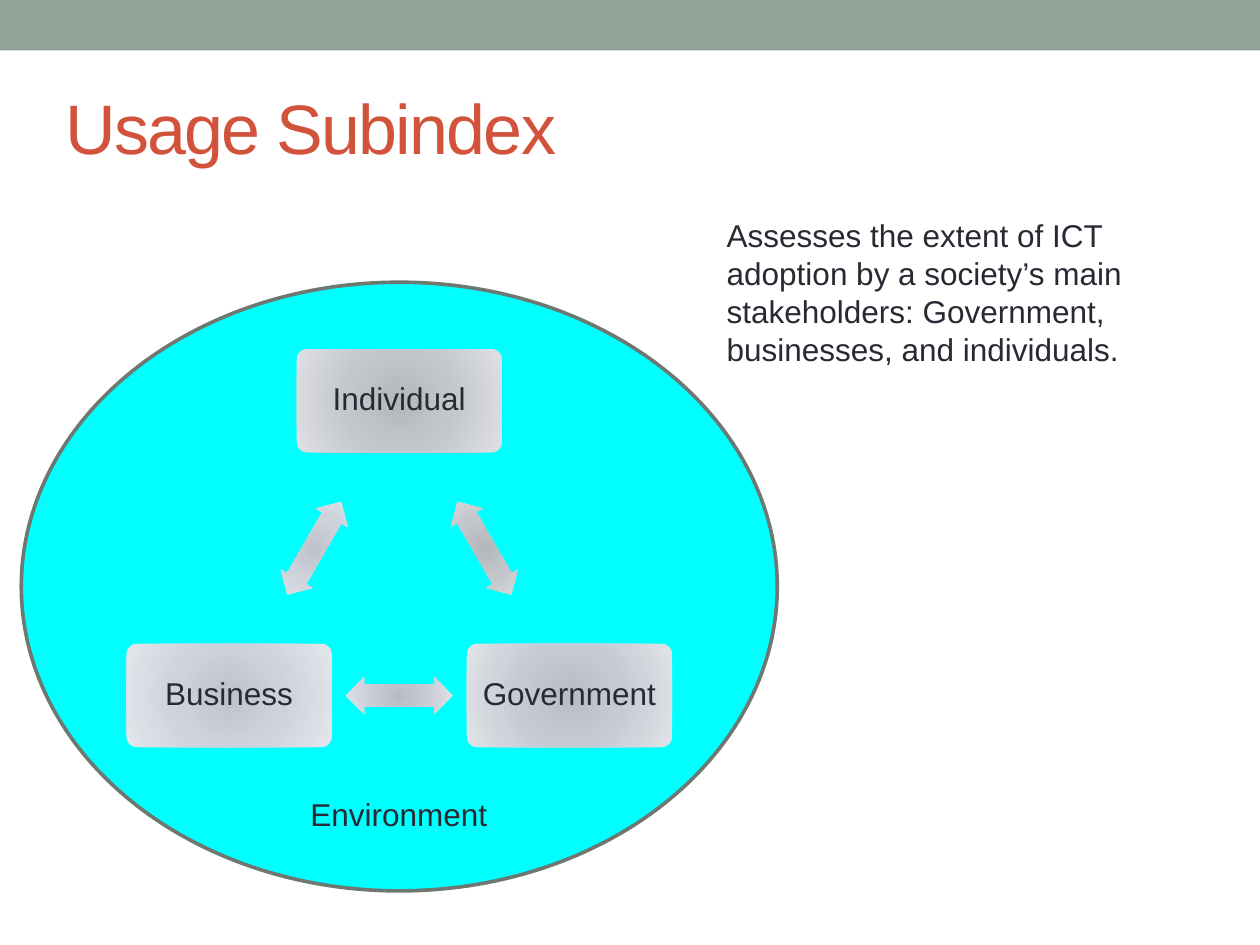
import math

import lxml.etree
import pptx
import pptx.dml.color
import pptx.enum.shapes
import pptx.enum.text
import pptx.oxml.ns
import pptx.util

Cm = pptx.util.Cm
Pt = pptx.util.Pt
Shape = pptx.enum.shapes.MSO_SHAPE
Align = pptx.enum.text.PP_ALIGN
Anchor = pptx.enum.text.MSO_ANCHOR
qn = pptx.oxml.ns.qn

COLORS = {
    "band": "93A299",
    "ellipse": "00FFFF",
    "outline": "6D7871",
    "title": "D2533C",
    "text": "292934",
}


def write_text(shape, text, size=18, color="text", align=Align.LEFT, anchor=Anchor.TOP):
    frame = shape.text_frame
    frame.text = text
    frame.word_wrap = True
    frame.vertical_anchor = anchor
    paragraph = frame.paragraphs[0]
    paragraph.alignment = align
    span = paragraph.runs[0]
    span.font.name = "Arial"
    span.font.size = Pt(size)
    span.font.color.rgb = pptx.dml.color.RGBColor.from_string(COLORS[color])
    return paragraph


def add_figure(kind, left, top, width, height, fill):
    """Add a preset shape with a solid fill, or a radial one for a list of colours."""
    shape = page.shapes.add_shape(kind, Cm(left), Cm(top), Cm(width), Cm(height))
    shape.shadow.inherit = False
    shape.line.fill.background()
    if isinstance(fill, str):
        shape.fill.solid()
        shape.fill.fore_color.rgb = pptx.dml.color.RGBColor.from_string(fill)
        return shape
    shape.fill.gradient()
    gradient = shape.element.spPr.find(qn("a:gradFill"))
    for child in list(gradient):
        gradient.remove(child)
    stops = lxml.etree.SubElement(gradient, qn("a:gsLst"))
    for position, color in zip((0, 45, 100), fill):
        stop = lxml.etree.SubElement(stops, qn("a:gs"), pos=str(position * 1000))
        lxml.etree.SubElement(stop, qn("a:srgbClr"), val=color)
    circle = lxml.etree.SubElement(gradient, qn("a:path"), path="circle")
    lxml.etree.SubElement(circle, qn("a:fillToRect"), {side: "100000" for side in "ltrb"})
    return shape


deck = pptx.Presentation()
deck.slide_width, deck.slide_height = Cm(25.4), Cm(19.05)
page = deck.slides.add_slide(deck.slide_layouts[6])

# Top band and title
add_figure(Shape.RECTANGLE, 0, 0, 25.4, 1.02, COLORS["band"])
title = page.shapes.add_textbox(Cm(1.07), Cm(1.07), Cm(22.86), Cm(2.97))
paragraph = write_text(title, "Usage Subindex", 40, "title", anchor=Anchor.MIDDLE)
paragraph.runs[0].font._element.set("spc", "-100")

# Environment ellipse
ellipse = add_figure(Shape.OVAL, 0.43, 5.69, 15.24, 12.27, COLORS["ellipse"])
ellipse.line.color.rgb = pptx.dml.color.RGBColor.from_string(COLORS["outline"])
ellipse.line.width = Pt(2.08)

# Stakeholders on an equilateral triangle, clockwise from the top
center_x, top_y, side = 8.05, 8.08, 6.86
bottom_y = top_y + side * math.sqrt(3) / 2
stakeholders = [
    ("Individual", center_x, top_y, ("B4B7BC", "C3C7CB", "DFE0E3")),
    ("Government", center_x + side / 2, bottom_y, ("B8BCC3", "C6CBD3", "E0E3E7")),
    ("Business", center_x - side / 2, bottom_y, ("BEC3CB", "CDD2DB", "E3E6EB")),
]
box_width, box_height = 4.14, 2.08
arrow_width, arrow_height = 2.16, 0.74
for index, (name, x, y, shades) in enumerate(stakeholders):
    box = add_figure(Shape.ROUNDED_RECTANGLE, x - box_width / 2, y - box_height / 2,
                     box_width, box_height, shades)
    box.adjustments[0] = 0.1
    frame = box.text_frame
    frame.margin_left = frame.margin_right = Cm(0.23)
    frame.margin_top = frame.margin_bottom = Cm(0.23)
    paragraph = write_text(box, name, align=Align.CENTER, anchor=Anchor.MIDDLE)
    paragraph.line_spacing = 0.9

    # Two-way arrow halfway to the next stakeholder
    next_x, next_y = stakeholders[(index + 1) % len(stakeholders)][1:3]
    arrow = add_figure(Shape.LEFT_RIGHT_ARROW, (x + next_x - arrow_width) / 2,
                       (y + next_y - arrow_height) / 2, arrow_width, arrow_height, shades)
    arrow.adjustments[0] = 0.6
    arrow.adjustments[1] = 0.5
    arrow.rotation = 60 + 120 * index

# Ellipse label and description
label = page.shapes.add_textbox(Cm(5.08), Cm(15.9), Cm(5.92), Cm(1.02))
write_text(label, "Environment", align=Align.CENTER)
description = page.shapes.add_textbox(Cm(14.4), Cm(4.24), Cm(10.59), Cm(4.11))
write_text(description, "Assesses the extent of ICT adoption by a society’s main "
           "stakeholders: Government, businesses, and individuals.")

deck.save("out.pptx")
